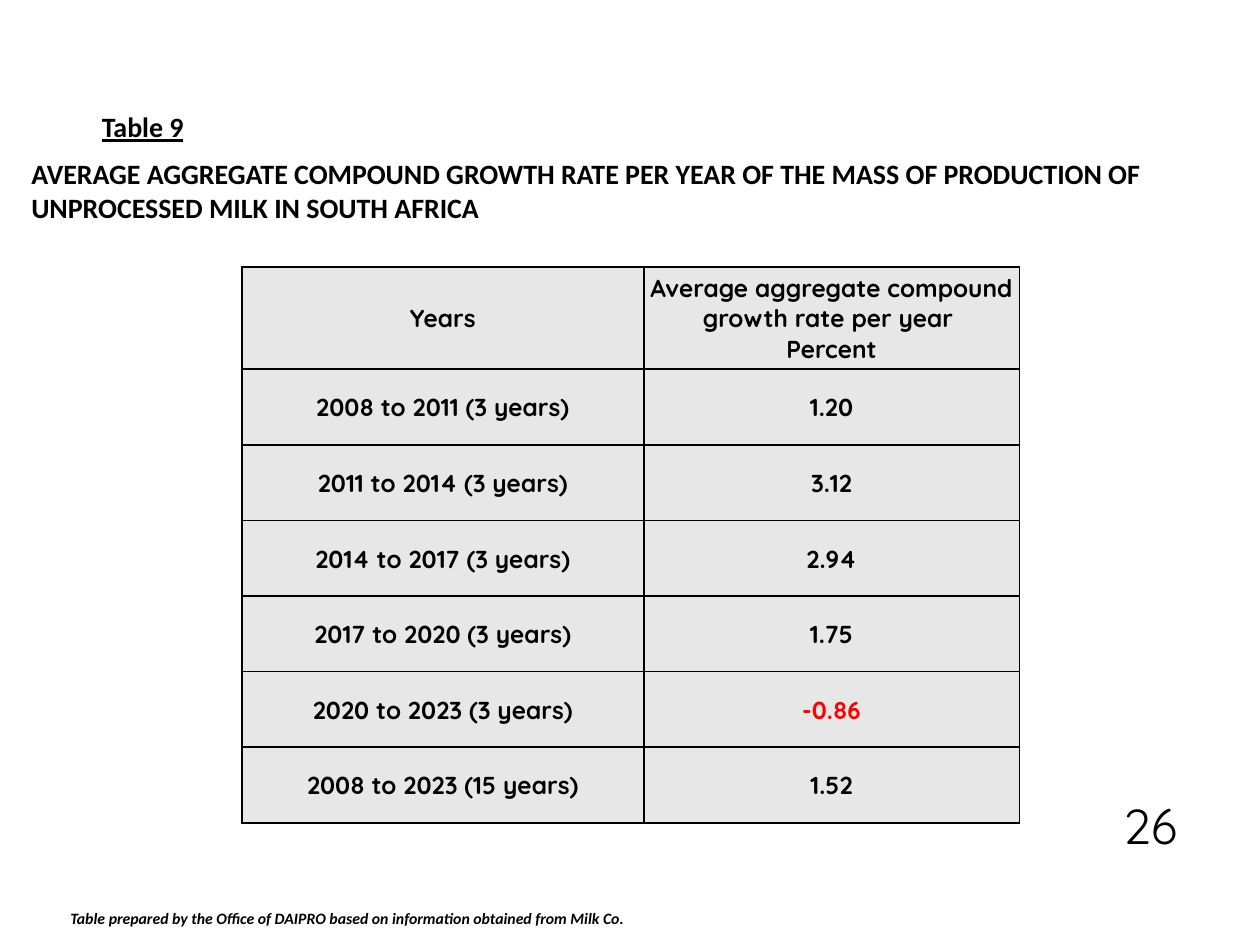
"""Build the slide with the table of milk production growth rates."""
from lxml.etree import SubElement
from pptx import Presentation
from pptx.dml.color import RGBColor
from pptx.enum.text import MSO_ANCHOR, PP_ALIGN
from pptx.oxml.ns import qn
from pptx.util import Inches, Pt

BLACK, RED, GREY = "000000", "FF0000", "E7E7E7"
BOLD = {"bold": True}
TEXTS = [
    ((0.46, 7.16, 7.41, 0.25), MSO_ANCHOR.MIDDLE, PP_ALIGN.LEFT, "Calibri", 9,
     {"bold": True, "italic": True},
     ["Table prepared by the Office of DAIPRO based on information obtained from Milk Co."]),
    ((0.71, 0.82, 0.96, 0.37), MSO_ANCHOR.TOP, PP_ALIGN.LEFT, "Calibri", 16,
     {"bold": True, "underline": True}, ["Table 9"]),
    ((0.15, 1.19, 9.72, 0.64), MSO_ANCHOR.MIDDLE, PP_ALIGN.LEFT, "Calibri", 16, BOLD,
     ["AVERAGE AGGREGATE COMPOUND GROWTH RATE PER YEAR OF THE MASS OF PRODUCTION OF",
      "UNPROCESSED MILK IN SOUTH AFRICA"]),
    ((8.5, 6.1, 0.94, 0.73), MSO_ANCHOR.BOTTOM, PP_ALIGN.RIGHT, "Quicksand", 28, {}, ["26"]),
]
HEADER = (["Years"], ["Average aggregate compound growth rate per year ", "Percent"])
RATES = [
    ("2008 to 2011 (3 years)", "1.20"),
    ("2011 to 2014 (3 years)", "3.12"),
    ("2014 to 2017 (3 years)", "2.94"),
    ("2017 to 2020 (3 years)", "1.75"),
    ("2020 to 2023 (3 years)", "-0.86"),
    ("2008 to 2023 (15 years)", "1.52"),
]
COL_WIDTHS = (3.19, 2.98)
HEADER_HEIGHT, ROW_HEIGHT = 0.81, 0.6


def rgb(color):
    return RGBColor.from_string(color)


def write(tf, lines, align, font, size, style, color=BLACK):
    for i, line in enumerate(lines):
        p = tf.add_paragraph() if i else tf.paragraphs[0]
        p.alignment = align
        r = p.add_run()
        r.text = line
        r.font.name, r.font.size = font, Pt(size)
        r.font.color.rgb = rgb(color)
        for name, value in style.items():
            setattr(r.font, name, value)


def add_borders(cell):
    tc_pr = cell._tc.get_or_add_tcPr()
    for i, side in enumerate(("lnL", "lnR", "lnT", "lnB")):
        ln = tc_pr.makeelement(qn(f"a:{side}"), {"w": str(Pt(1))})
        fill = SubElement(ln, qn("a:solidFill"))
        SubElement(fill, qn("a:srgbClr"), val=BLACK)
        tc_pr.insert(i, ln)


def add_rates_table(s):
    rows = [HEADER] + [([years], [rate]) for years, rate in RATES]
    heights = [HEADER_HEIGHT] + [ROW_HEIGHT] * len(RATES)
    box = (1.92, 2.12, sum(COL_WIDTHS), sum(heights))
    table = s.shapes.add_table(len(rows), len(COL_WIDTHS), *map(Inches, box)).table
    for col, width in zip(table.columns, COL_WIDTHS):
        col.width = Inches(width)
    for r, (row, height) in enumerate(zip(rows, heights)):
        table.rows[r].height = Inches(height)
        for c, lines in enumerate(row):
            cell = table.cell(r, c)
            cell.margin_left = cell.margin_right = cell.margin_top = Inches(0.01)
            cell.margin_bottom = 0
            cell.vertical_anchor = MSO_ANCHOR.MIDDLE
            cell.fill.solid()
            cell.fill.fore_color.rgb = rgb(GREY)
            color = RED if lines[0].startswith("-") else BLACK
            write(cell.text_frame, lines, PP_ALIGN.CENTER, "Quicksand", 14, BOLD, color)
            add_borders(cell)


def main():
    prs = Presentation()
    prs.slide_width, prs.slide_height = Inches(10), Inches(7.5)
    s = prs.slides.add_slide(prs.slide_layouts[6])
    for box, anchor, align, font, size, style, lines in TEXTS:
        tf = s.shapes.add_textbox(*map(Inches, box)).text_frame
        tf.word_wrap = True
        tf.vertical_anchor = anchor
        write(tf, lines, align, font, size, style)
    add_rates_table(s)
    prs.save("out.pptx")


if __name__ == "__main__":
    main()
